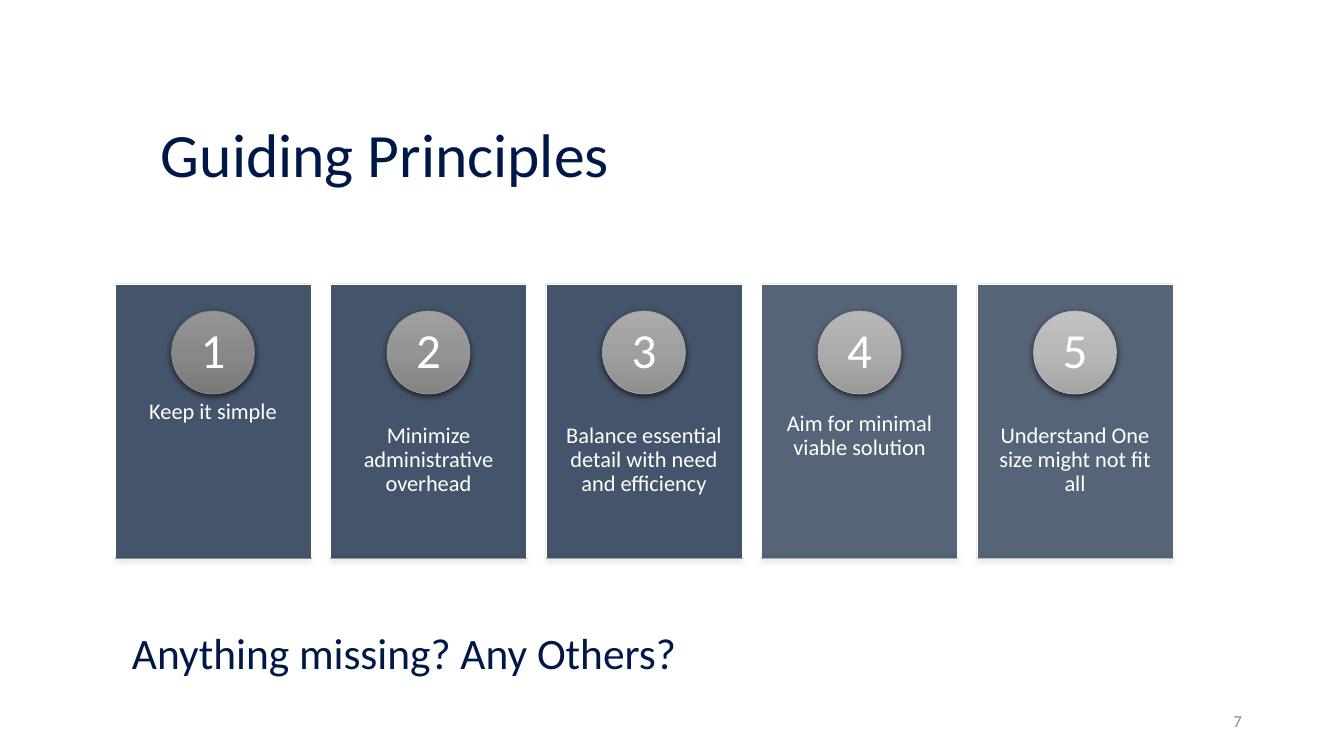
from copy import deepcopy

from lxml.etree import SubElement
from pptx import Presentation
from pptx.dml.color import RGBColor
from pptx.enum.shapes import MSO_SHAPE
from pptx.enum.text import MSO_ANCHOR, PP_ALIGN
from pptx.oxml.ns import qn
from pptx.util import Pt

PX = 914400 / 100.8
FONT = "Calibri"
COLORS = {
    "navy": "001848",
    "slate": "44546A",
    "white": "FFFFFF",
    "black": "000000",
    "gray": "8C8C95",
}
# wording, card opacity, tones of the badge, tones of the base line
CARDS = [
    ("Keep it simple", 100,
     ("959595", "888888", "797979"), ("9B9B9B", "8E8E8E", "7E7E7E")),
    ("Minimize administrative overhead", 100,
     ("A0A0A0", "949494", "848484"), ("A5A5A5", "9A9A9A", "898989")),
    ("Balance essential detail with need and efficiency", 100,
     ("ABABAB", "A0A0A0", "8E8E8E"), ("B0B0B0", "A6A6A6", "949494")),
    ("Aim for minimal viable solution", 90,
     ("B6B6B6", "ACACAC", "999999"), ("BBBBBB", "B2B2B2", "9F9F9F")),
    ("Understand One size might not fit all", 90,
     ("C1C1C1", "B8B8B8", "A4A4A4"), ("C7C7C7", "BEBEBE", "A9A9A9")),
]


def emu(*sizes):
    return [round(size * PX) for size in sizes]


def rgb(name):
    return RGBColor.from_string(COLORS[name])


def add_text(shapes, box, text, size, color, align=PP_ALIGN.LEFT,
             anchor=MSO_ANCHOR.TOP, inset=(10, 5), lines=1.0, indent=0):
    frame = shapes.add_textbox(*emu(*box)).text_frame
    frame.word_wrap = True
    frame.vertical_anchor = anchor
    side, edge = emu(*inset)
    frame.margin_left = frame.margin_right = side
    frame.margin_top = frame.margin_bottom = edge
    para = frame.paragraphs[0]
    para.alignment = align
    para.line_spacing = lines
    if indent:
        props = para._p.get_or_add_pPr()
        props.set("marL", str(emu(indent)[0]))
        props.set("indent", "0")
    run = para.add_run()
    run.text = text
    run.font.name = FONT
    run.font.size = Pt(size)
    run.font.color.rgb = rgb(color)


def add_shape(shapes, kind, box):
    shape = shapes.add_shape(kind, *emu(*box))
    shape.shadow.inherit = False
    shape.line.width = Pt(0.5)
    return shape


def add_glossy(shapes, kind, box, tones):
    """Shape with a vertical three-tone gradient and a soft drop shadow."""
    shape = add_shape(shapes, kind, box)
    shape.line.color.rgb = RGBColor.from_string(tones[1])
    fill = shape.fill
    fill.gradient()
    fill.gradient_angle = 270
    props = shape._element.spPr
    stops = props.find(".//" + qn("a:gsLst"))
    stops.insert(1, deepcopy(stops[0]))
    for stop, place, tone in zip(fill.gradient_stops, (0, 0.5, 1), tones):
        stop.position = place
        stop.color.rgb = RGBColor.from_string(tone)
    shadow = SubElement(props.find(qn("a:effectLst")), qn("a:outerShdw"),
                        blurRad=str(Pt(4.5)), dist=str(Pt(1.5)),
                        dir="5400000", algn="ctr", rotWithShape="0")
    tint = SubElement(shadow, qn("a:srgbClr"), val=COLORS["black"])
    SubElement(tint, qn("a:alpha"), val="63000")


def add_card(shapes, box, number, card):
    left, top, width, height = box
    text, opaque, badge, base = card
    back = add_shape(shapes, MSO_SHAPE.RECTANGLE, box)
    back.fill.solid()
    back.fill.fore_color.rgb = rgb("slate")
    back.line.color.rgb = rgb("white")
    if opaque < 100:
        tint = back._element.spPr.find(qn("a:solidFill"))[0]
        SubElement(tint, qn("a:alpha"), val=str(opaque * 1000))

    add_text(shapes, (left, top + 104, width, 164), text, 16, "white",
             PP_ALIGN.CENTER, inset=(15, 36), lines=0.9)

    size, pad = 83, 12
    x, y = left + (width - size) / 2, top + 27
    add_glossy(shapes, MSO_SHAPE.OVAL, (x, y, size, size), badge)
    inner = size - 2 * pad
    add_text(shapes, (x + pad, y + pad, inner, inner), str(number), 35,
             "white", PP_ALIGN.CENTER, MSO_ANCHOR.MIDDLE, (6, 1), 0.9)

    add_glossy(shapes, MSO_SHAPE.RECTANGLE,
               (left, top + height, width, 0), base)


def add_cards(slide, box):
    left, top, width, height = box
    wide = 196
    step = (width - wide) / (len(CARDS) - 1)
    group = slide.shapes.add_group_shape()
    for i, card in enumerate(CARDS):
        add_card(group.shapes, (left + i * step, top, wide, height),
                 i + 1, card)


def main():
    deck = Presentation()
    deck.slide_width, deck.slide_height = emu(1344, 756)
    slide = deck.slides.add_slide(deck.slide_layouts[6])
    shapes = slide.shapes
    add_text(shapes, (151, 76, 1058, 163), "Guiding Principles", 44, "navy",
             anchor=MSO_ANCHOR.MIDDLE, lines=0.9)
    add_cards(slide, (115, 284, 1058, 274))
    add_text(shapes, (72, 611, 1228, 124), "Anything missing? Any Others?",
             31, "navy", lines=1.2, indent=50)
    add_text(shapes, (950, 701, 302, 40), "7", 12, "gray",
             PP_ALIGN.RIGHT, MSO_ANCHOR.MIDDLE)
    deck.save("out.pptx")


if __name__ == "__main__":
    main()
